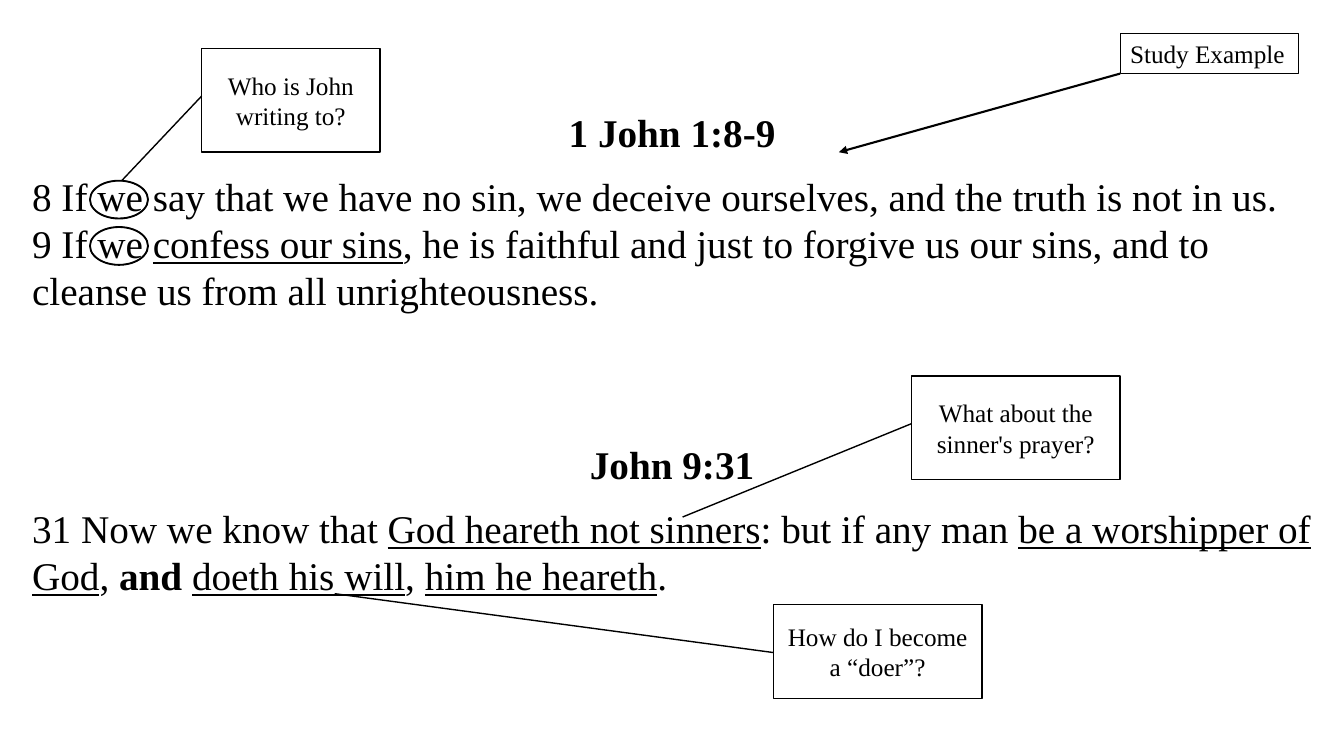
from lxml import etree
from pptx import Presentation
from pptx.dml.color import RGBColor
from pptx.enum.shapes import MSO_CONNECTOR, MSO_SHAPE
from pptx.enum.text import MSO_ANCHOR, MSO_AUTO_SIZE, PP_ALIGN
from pptx.oxml.ns import qn
from pptx.util import Inches, Pt

FONT = "Times New Roman"
BLACK = "000000"
WHITE = "FFFFFF"
VERSE_SIZE = 28
NOTE_SIZE = 18


def color(hex_code):
    return RGBColor.from_string(hex_code)


def add_run(paragraph, text, size, bold=False, underline=False):
    run = paragraph.add_run()
    run.text = text
    run.font.name = FONT
    run.font.size = Pt(size)
    run.font.bold = bold
    run.font.underline = underline
    run.font.color.rgb = color(BLACK)


def outline(shape, width=1):
    shape.line.color.rgb = color(BLACK)
    shape.line.width = Pt(width)


def add_outlined_shape(slide, kind, box):
    shape = slide.shapes.add_shape(kind, *map(Inches, box))
    shape.shadow.inherit = False
    shape.fill.solid()
    shape.fill.fore_color.rgb = color(WHITE)
    outline(shape)
    return shape


def add_text_frame(slide, box):
    text_box = slide.shapes.add_textbox(*map(Inches, box))
    frame = text_box.text_frame
    frame.word_wrap = True
    frame.auto_size = MSO_AUTO_SIZE.SHAPE_TO_FIT_TEXT
    return text_box, frame


def add_passage(slide, box, reference, verses):
    """Centred reference above its verses; each verse is a list of (text, style)."""
    _, frame = add_text_frame(slide, box)
    heading = frame.paragraphs[0]
    heading.alignment = PP_ALIGN.CENTER
    heading.space_after = Pt(12)
    add_run(heading, reference, VERSE_SIZE, bold=True)
    for verse in verses:
        paragraph = frame.add_paragraph()
        for text, style in verse:
            add_run(paragraph, text, VERSE_SIZE,
                    bold=style == "bold", underline=style == "underline")


def add_word_ring(slide, box):
    ring = add_outlined_shape(slide, MSO_SHAPE.DONUT, box)
    ring.adjustments[0] = 0.012


def add_question(slide, box, question, target, start):
    """Callout whose line leaves the left edge at height share start for target."""
    left, top, width, height = box
    callout = add_outlined_shape(slide, MSO_SHAPE.LINE_CALLOUT_1, box)
    target_x, target_y = target
    leader = (start, 0, (target_y - top) / height, (target_x - left) / width)
    for index, share in enumerate(leader):
        callout.adjustments[index] = share
    frame = callout.text_frame
    frame.word_wrap = True
    frame.vertical_anchor = MSO_ANCHOR.MIDDLE
    frame.paragraphs[0].alignment = PP_ALIGN.CENTER
    add_run(frame.paragraphs[0], question, NOTE_SIZE)


def add_study_label(slide, box, target):
    """Label with an arrow from its lower left corner to target."""
    left, top, _, height = box
    label, frame = add_text_frame(slide, box)
    outline(label, 0.75)
    add_run(frame.paragraphs[0], "Study Example", NOTE_SIZE)

    arrow = slide.shapes.add_connector(
        MSO_CONNECTOR.STRAIGHT, *map(Inches, (left, top + height, *target)))
    outline(arrow, 1.5)
    etree.SubElement(arrow.line._get_or_add_ln(), qn("a:tailEnd"), type="triangle")
    etree.SubElement(arrow._element.spPr, qn("a:effectLst"))


def main():
    prs = Presentation()
    prs.slide_width = Inches(13.33)
    prs.slide_height = Inches(7.5)
    slide = prs.slides.add_slide(prs.slide_layouts[6])

    # First passage, with the word "we" ringed in both verses
    add_passage(slide, (0.22, 1.03, 12.89, 2.15), "1 John 1:8-9", [
        [("8 If we say that we have no sin, we deceive ourselves, "
          "and the truth is not in us.", None)],
        [("9 If we ", None), ("confess our sins", "underline"),
         (", he is faithful and just to forgive us our sins, "
          "and to cleanse us from all unrighteousness.", None)],
    ])
    for ring_top in (1.79, 2.25):
        add_word_ring(slide, (0.89, ring_top, 0.58, 0.38))

    # Second passage
    add_passage(slide, (0.22, 4.32, 12.89, 1.68), "John 9:31", [
        [("31 Now we know that ", None), ("God heareth not sinners", "underline"),
         (": but if any man ", None), ("be a worshipper of God", "underline"),
         (", ", None), ("and ", "bold"), ("doeth his will", "underline"),
         (", ", None), ("him he heareth", "underline"), (".", None)],
    ])

    # Questions pointing at words in the passages
    add_question(slide, (2, 0.48, 1.77, 1.03), "Who is John writing to?",
                 target=(1.21, 1.79), start=0.46)
    add_question(slide, (9.04, 3.73, 2.07, 1.03), "What about the sinner's prayer?",
                 target=(6.77, 5.13), start=0.46)
    add_question(slide, (7.67, 6, 2.07, 0.93), "How do I become a “doer”?",
                 target=(3.32, 5.89), start=0.51)

    # Study label and arrow
    add_study_label(slide, (11.11, 0.33, 1.77, 0.4), target=(8.32, 1.51))

    prs.save("out.pptx")


if __name__ == "__main__":
    main()
